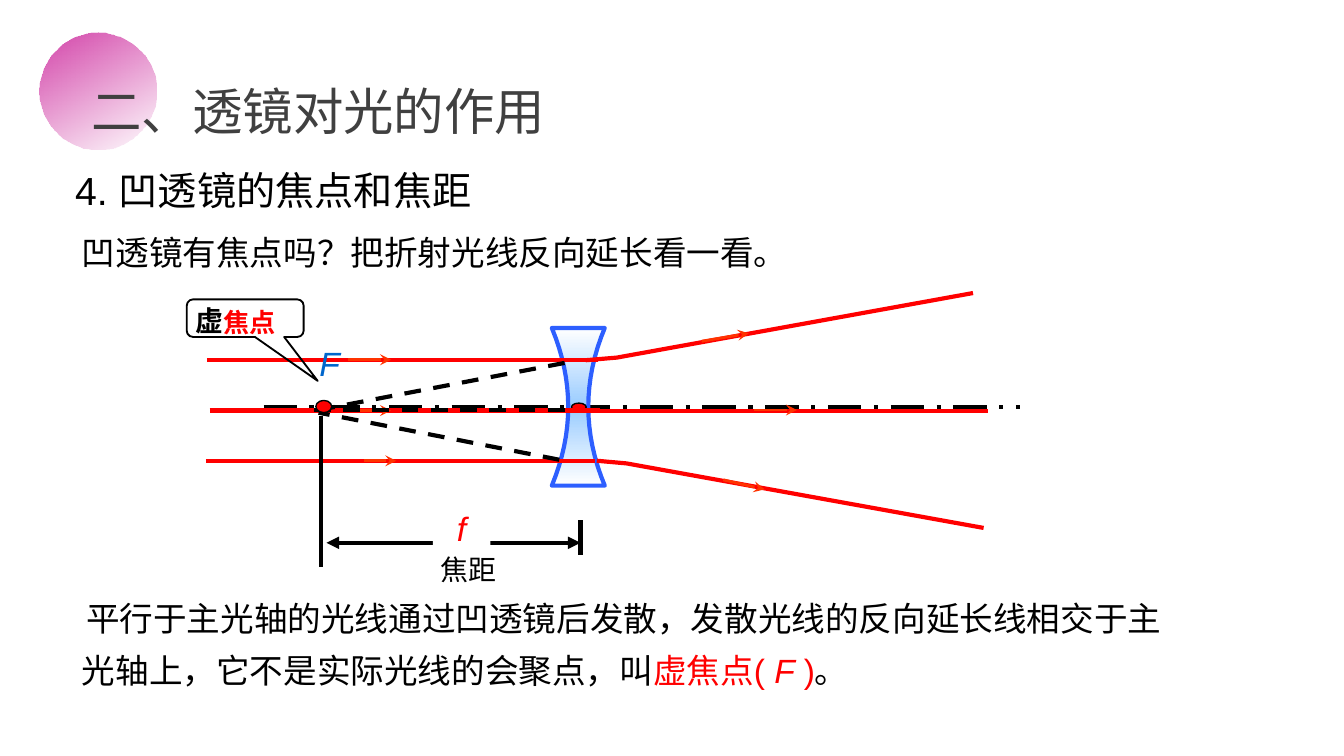
from lxml import etree
from pptx import Presentation
from pptx.dml.color import RGBColor
from pptx.enum.dml import MSO_LINE as Dash
from pptx.enum.shapes import MSO_CONNECTOR, MSO_SHAPE as Shape
from pptx.enum.text import MSO_ANCHOR as Anchor, MSO_AUTO_SIZE as AutoSize, PP_ALIGN as Align
from pptx.oxml.ns import qn
from pptx.util import Cm, Pt

BLACK, WHITE, RED, ORANGE = "000000", "FFFFFF", "FF0000", "FF3300"
GREY, BLUE, LENS_BLUE, PINK = "404040", "0066CC", "2D5FFF", "D343A9"


def rgb(color):
    return RGBColor.from_string(color)


def set_line(s, color, width):
    s.line.color.rgb = rgb(color)
    s.line.width = Pt(width)


def set_gradient(s, stops, angle):
    """Fill with (position %, colour, opacity %) stops; angle is clockwise."""
    s.fill.gradient()
    s.fill.gradient_angle = 360 - angle
    stop_list = s.fill._fill._gradFill.find(qn("a:gsLst"))
    for old in list(stop_list):
        stop_list.remove(old)
    for pos, color, opacity in stops:
        gs = etree.SubElement(stop_list, qn("a:gs"), pos=str(pos * 1000))
        clr = etree.SubElement(gs, qn("a:srgbClr"), val=color)
        if opacity < 100:
            etree.SubElement(clr, qn("a:alpha"), val=str(opacity * 1000))


def write(s, runs, align=Align.LEFT, insets=(0.18, 0.1)):
    """Fill one paragraph with (text, size, colour, style) runs."""
    tf = s.text_frame
    tf.word_wrap = True
    tf.auto_size = AutoSize.NONE
    tf.vertical_anchor = Anchor.TOP
    tf.margin_left = tf.margin_right = Cm(insets[0])
    tf.margin_top = tf.margin_bottom = Cm(insets[1])
    p = tf.paragraphs[0]
    p.alignment = align
    for text, size, color, style in runs:
        r = p.add_run()
        r.text = text
        r.font.name = "Arial"
        r.font.size = Pt(size)
        r.font.color.rgb = rgb(color)
        r.font.bold = style == "bold"
        r.font.italic = style == "italic"
    return p


def add_text(slide, box, runs, align=Align.LEFT):
    return write(slide.shapes.add_textbox(*map(Cm, box)), runs, align)


def add_shape(slide, kind, box, fill=None, line=None, width=0.75):
    s = slide.shapes.add_shape(kind, *map(Cm, box))
    s.shadow.inherit = False
    if fill:
        s.fill.solid()
        s.fill.fore_color.rgb = rgb(fill)
    else:
        s.fill.background()
    if line:
        set_line(s, line, width)
    else:
        s.line.fill.background()
    return s


def add_line(slide, start, end, color=BLACK, width=2.25, dash=None, head=None, tail=None):
    s = slide.shapes.add_connector(MSO_CONNECTOR.STRAIGHT, *map(Cm, start + end))
    set_line(s, color, width)
    if dash:
        s.line.dash_style = dash
    ln = s.line._get_or_add_ln()
    for tag, kind in (("a:headEnd", head), ("a:tailEnd", tail)):
        if kind:
            etree.SubElement(ln, qn(tag), type=kind)
    etree.SubElement(s._element.spPr, qn("a:effectLst"))


def add_path(slide, points, color, close):
    points = [(Cm(x), Cm(y)) for x, y in points]
    builder = slide.shapes.build_freeform(*points[0])
    builder.add_line_segments(points[1:], close=close)
    s = builder.convert_to_shape()
    s.shadow.inherit = False
    s.fill.background()
    set_line(s, color, 2.25)
    return s


def add_direction(slide, start, end):
    add_line(slide, start, end, ORANGE, 1.5, tail="stealth")


def add_lens(slide, cx=10.93, cy=7.69, half_height=1.49, waist=0.19, edge=0.5):
    steps = [i / 8 for i in range(-8, 9)]
    right = [(cx + waist + (edge - waist) * t * t, cy + half_height * t) for t in steps]
    left = [(2 * cx - x, y) for x, y in reversed(right)]
    s = add_path(slide, right + left, LENS_BLUE, True)
    set_gradient(s, [(0, WHITE, 100), (50, "99CCFF", 100), (100, WHITE, 100)], 90)


def add_rays(slide):
    # Parallel incoming rays: left end, right end, height, arrow span
    for x1, x2, y, a1, a2 in ((3.91, 11.3, 6.8, 6.58, 7.39),
                              (3.96, 11.33, 7.76, 6.58, 7.39),
                              (3.89, 11.25, 8.71, 6.88, 7.49)):
        add_line(slide, (x1, y), (x2, y), RED)
        add_direction(slide, (a1, y), (a2, y))
    # Diverging rays and the undeviated central ray
    add_path(slide, [(11.07, 6.81), (11.66, 6.76), (18.39, 5.54)], RED, False)
    add_direction(slide, (13.26, 6.45), (14.15, 6.3))
    add_path(slide, [(11.28, 8.71), (11.84, 8.76), (18.59, 9.98)], RED, False)
    add_direction(slide, (13.67, 9.07), (14.45, 9.25))
    add_line(slide, (11.3, 7.77), (18.67, 7.77), RED)
    add_direction(slide, (14.25, 7.75), (15.06, 7.75))
    # Backward extensions to the virtual focus
    for start, end in (((10.57, 8.69), (6.02, 7.8)),
                       ((10.67, 6.86), (6.02, 7.75)),
                       ((10.67, 7.75), (5.92, 7.75))):
        add_line(slide, start, end, dash=Dash.DASH)


def add_focus_labels(slide):
    callout = add_shape(slide, Shape.ROUNDED_RECTANGULAR_CALLOUT,
                        (3.53, 5.66, 2.21, 0.71), line=BLACK, width=1)
    for i, value in enumerate((0.62, 1.67, 0.17)):
        callout.adjustments[i] = value
    write(callout, [("焦点", 14, RED, "bold")], Align.CENTER, (0, 0.1))
    callout.text_frame.margin_left = Cm(0.18)
    add_text(slide, (2.67, 5.64, 2.59, 0.84), [("虚", 15, BLACK, "bold")], Align.CENTER)
    add_text(slide, (5.38, 6.38, 1.7, 0.97), [("F", 18, BLUE, "italic")], Align.CENTER)


def add_focal_length(slide):
    add_line(slide, (10.97, 9.83), (10.97, 10.49))
    add_line(slide, (6.07, 7.87), (6.07, 10.72))
    add_line(slide, (6.17, 10.26), (10.97, 10.26), head="triangle", tail="triangle")
    symbol = add_shape(slide, Shape.RECTANGLE, (8.18, 9.6, 1.09, 0.76), WHITE)
    write(symbol, [("f", 18, RED, "italic")], Align.CENTER, (0, 0))
    add_text(slide, (6.91, 10.34, 3.89, 0.84), [("焦距", 15, BLACK, "")], Align.CENTER)


def add_title(slide):
    title = slide.shapes.title
    title.left, title.top, title.width, title.height = map(Cm, (1.55, 1.42, 9.17, 1.35))
    write(title, [("二、透镜对光的作用", 27, GREY, "")])
    slide.shapes._spTree.append(title._element)  # in front of the circle


def main():
    prs = Presentation()
    prs.slide_width, prs.slide_height = Cm(25.4), Cm(14.29)
    slide = prs.slides.add_slide(prs.slide_layouts[5])

    # Header
    circle = add_shape(slide, Shape.OVAL, (0.74, 0.61, 2.21, 2.21))
    set_gradient(circle, [(0, PINK, 100), (100, PINK, 0)], 60)
    add_title(slide)
    add_text(slide, (1.24, 3.05, 12.27, 1.09), [("4. 凹透镜的焦点和焦距", 21, BLACK, "")])
    add_text(slide, (1.37, 4.29, 22.96, 0.97),
             [("凹透镜有焦点吗？把折射光线反向延长看一看。", 18, BLACK, "")])

    # Lens diagram
    add_line(slide, (4.98, 7.7), (19.28, 7.7), dash=Dash.LONG_DASH_DOT)
    add_lens(slide)
    add_shape(slide, Shape.OVAL, (10.8, 7.62, 0.28, 0.15), RED, BLACK)
    add_rays(slide)
    add_focus_labels(slide)
    add_focal_length(slide)
    add_shape(slide, Shape.OVAL, (5.97, 7.57, 0.3, 0.23), RED, BLACK)

    # Conclusion
    p = add_text(slide, (1.37, 10.97, 20.96, 2.18), [
        ("平行于主光轴的光线通过凹透镜后发散，发散光线的反向延长线相交于主光轴上，"
         "它不是实际光线的会聚点，叫", 18, BLACK, ""),
        ("虚焦点( ", 18, RED, ""), ("F ", 18, RED, "italic"),
        (")", 18, RED, ""), ("。", 18, BLACK, "")])
    p.line_spacing = 1.3
    p._p.get_or_add_pPr().set("indent", str(Cm(0.08)))

    prs.save("out.pptx")


if __name__ == "__main__":
    main()
